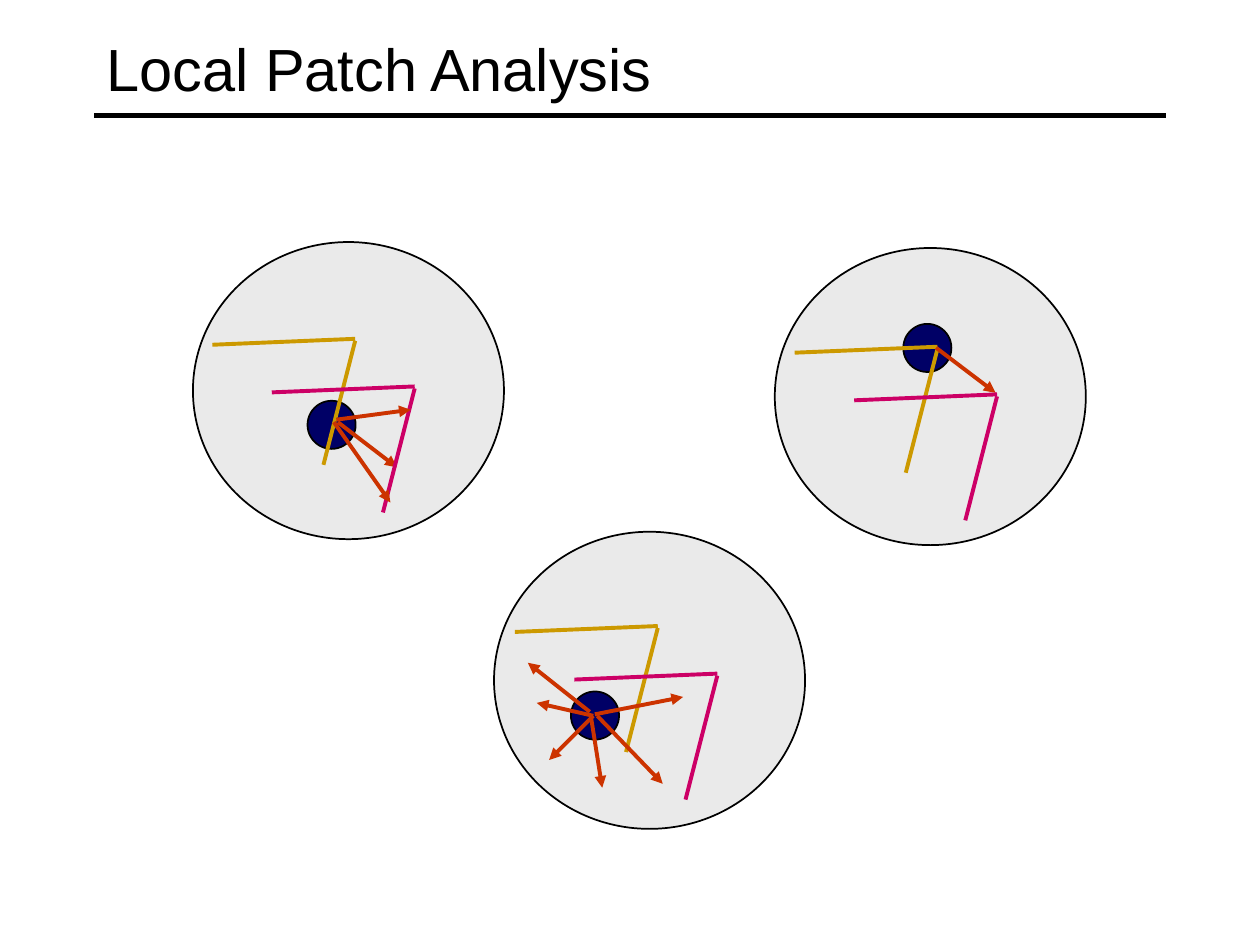
from pptx import Presentation
from pptx.dml.color import RGBColor
from pptx.enum.shapes import MSO_CONNECTOR, MSO_SHAPE
from pptx.enum.text import MSO_ANCHOR, MSO_AUTO_SIZE, PP_ALIGN
from pptx.oxml.ns import qn
from pptx.util import Cm, Pt
from lxml.etree import SubElement

THEME = {
    "ink": RGBColor.from_string("000000"),
    "patch": RGBColor.from_string("EAEAEA"),
    "window": RGBColor.from_string("000066"),
    "first corner": RGBColor.from_string("CC9900"),
    "second corner": RGBColor.from_string("CC0066"),
    "motion": RGBColor.from_string("CC3300"),
    "font": "Arial",
    "title size": Pt(34),
    "rule width": Pt(3),
    "stroke width": Pt(2.25),
    "outline width": Pt(1),
}


def add_ellipse(shapes, left, top, width, height, fill):
    ellipse = shapes.add_shape(MSO_SHAPE.OVAL, Cm(left), Cm(top), Cm(width), Cm(height))
    ellipse.shadow.inherit = False
    ellipse.fill.solid()
    ellipse.fill.fore_color.rgb = THEME[fill]
    ellipse.line.color.rgb = THEME["ink"]
    ellipse.line.width = THEME["outline width"]


def add_line(shapes, start, end, color, width="stroke width", arrow=False):
    line = shapes.add_connector(MSO_CONNECTOR.STRAIGHT, *map(Cm, (*start, *end)))
    line.line.color.rgb = THEME[color]
    line.line.width = THEME[width]
    properties = line._element.spPr
    if arrow:
        SubElement(properties.find(qn("a:ln")), qn("a:tailEnd"), type="triangle")
    SubElement(properties, qn("a:effectLst"))


# All positions are in centimetres: patch and window by top left corner,
# apex of the first corner, then start and end of each motion arrow.
PATCH_WIDTH, PATCH_HEIGHT, WINDOW_SIZE = 6.27, 5.99, 0.97
CORNER_SHIFT = (1.2, 0.96)
PATCHES = [
    {"at": (15.62, 5.0), "window": (18.21, 6.53), "apex": (18.9, 6.99),
     "arrows": [((18.87, 7.01), (20.07, 7.92))]},
    {"at": (3.89, 4.88), "window": (6.2, 8.08), "apex": (7.16, 6.83),
     "arrows": [((6.81, 8.51), (8.0, 9.42)),
                ((6.78, 8.46), (8.28, 8.26)),
                ((6.73, 8.51), (7.87, 10.13))]},
    {"at": (9.96, 10.72), "window": (11.51, 13.94), "apex": (13.26, 12.62),
     "arrows": [((12.04, 14.43), (13.36, 15.8)),
                ((11.99, 14.4), (13.77, 14.05)),
                ((11.91, 14.43), (12.14, 15.88)),
                ((11.96, 14.43), (10.82, 14.17)),
                ((11.89, 14.35), (10.64, 13.36)),
                ((11.96, 14.43), (11.07, 15.32))]},
]

deck = Presentation()
deck.slide_width, deck.slide_height = Cm(25.4), Cm(19.05)
page = deck.slides.add_slide(deck.slide_layouts[5])

# Title and the rule below it
title = page.shapes.title
for name, value in {"left": Cm(1.9), "top": Cm(0.2),
                    "width": Cm(21.6), "height": Cm(2.34)}.items():
    setattr(title, name, value)
frame = title.text_frame
for name, value in {"text": "Local Patch Analysis", "word_wrap": True,
                    "auto_size": MSO_AUTO_SIZE.NONE,
                    "vertical_anchor": MSO_ANCHOR.MIDDLE}.items():
    setattr(frame, name, value)
para = frame.paragraphs[0]
para.alignment = PP_ALIGN.LEFT
span = para.runs[0]
for name, value in {"name": THEME["font"], "size": THEME["title size"]}.items():
    setattr(span.font, name, value)
span.font.color.rgb = THEME["ink"]
add_line(page.shapes, (1.9, 2.33), (23.5, 2.33), "ink", "rule width")

# One group for each patch
for patch in PATCHES:
    shapes = page.shapes.add_group_shape().shapes
    add_ellipse(shapes, *patch["at"], PATCH_WIDTH, PATCH_HEIGHT, "patch")
    add_ellipse(shapes, *patch["window"], WINDOW_SIZE, WINDOW_SIZE, "window")

    # Each corner has a flat arm and a steep arm; the first arrow lies between them
    x, y = patch["apex"]
    shift_x, shift_y = CORNER_SHIFT
    first_arrow, *other_arrows = patch["arrows"]
    for color, x, y, arrows in (
        ("first corner", x, y, [first_arrow]),
        ("second corner", x + shift_x, y + shift_y, other_arrows),
    ):
        add_line(shapes, (x - 2.88, y + 0.12), (x, y), color)
        add_line(shapes, (x, y + 0.04), (x - 0.64, y + 2.54), color)
        for start, end in arrows:
            add_line(shapes, start, end, "motion", arrow=True)

deck.save("out.pptx")
